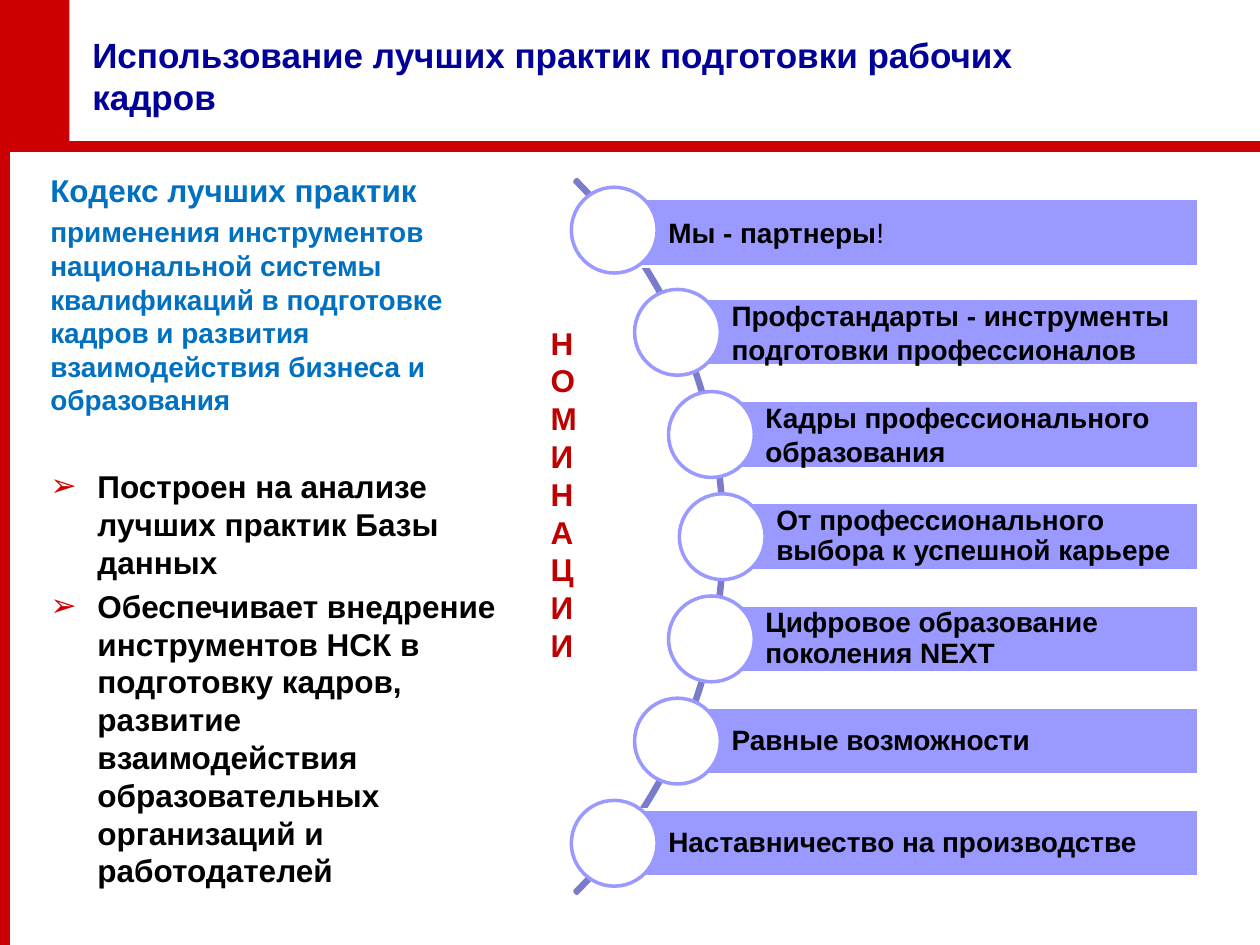
from dataclasses import dataclass
from math import sqrt

from lxml.etree import SubElement
from pptx import Presentation
from pptx.dml.color import RGBColor
from pptx.enum.shapes import MSO_CONNECTOR, MSO_SHAPE as SHAPE
from pptx.enum.text import MSO_ANCHOR as ANCHOR, MSO_AUTO_SIZE, PP_ALIGN as ALIGN
from pptx.oxml.ns import qn
from pptx.util import Cm, Pt


@dataclass(frozen=True)
class Theme:
    font: str = "Arial"
    red: str = "CC0000"
    dark_red: str = "C00000"
    navy: str = "000099"
    blue: str = "0070C0"
    lilac: str = "9999FF"
    arc: str = "7B7BCC"
    white: str = "FFFFFF"
    black: str = "000000"
    title_size: int = 20
    lead_size: int = 18
    text_size: int = 16


THEME = Theme()

NOMINATIONS = [
    ("Мы - партнеры", 1),
    ("Профстандарты - инструменты подготовки профессионалов", 1),
    ("Кадры профессионального образования", 1),
    ("От профессионального выбора к успешной карьере", 0.9),
    ("Цифровое образование поколения NEXT", 0.9),
    ("Равные возможности", 0.9),
    ("Наставничество на производстве", 0.9),
]

ADVANTAGES = [
    "Построен на анализе лучших практик Базы данных",
    "Обеспечивает внедрение инструментов НСК в подготовку кадров, "
    "развитие взаимодействия образовательных организаций и работодателей",
]


def place(box, left, top, width, height):
    box.left, box.top, box.width, box.height = map(Cm, (left, top, width, height))


def set_margins(frame, left, top, right, bottom):
    frame.margin_left, frame.margin_top = Cm(left), Cm(top)
    frame.margin_right, frame.margin_bottom = Cm(right), Cm(bottom)


def add_span(para, text, size=THEME.text_size, color=THEME.black, bold=True):
    span = para.add_run()
    span.text = text
    span.font.name = THEME.font
    span.font.size = Pt(size)
    span.font.bold = bold
    span.font.color.rgb = RGBColor.from_string(color)


def set_bullet(para, symbol=None):
    properties = para._p.get_or_add_pPr()
    indent = Cm(0.95) if symbol else 0
    properties.set("marL", str(indent))
    properties.set("indent", str(-indent))
    if symbol:
        color = SubElement(properties, qn("a:buClr"))
        SubElement(color, qn("a:srgbClr")).set("val", THEME.red)
        SubElement(properties, qn("a:buFont")).set("typeface", THEME.font)
        SubElement(properties, qn("a:buChar")).set("char", symbol)
    else:
        SubElement(properties, qn("a:buNone"))


def add_figure(page, kind, left, top, width, height, fill=None, line=None):
    box = page.shapes.add_shape(kind, *map(Cm, (left, top, width, height)))
    box.shadow.inherit = False
    if fill:
        box.fill.solid()
        box.fill.fore_color.rgb = RGBColor.from_string(fill)
    else:
        box.fill.background()
    if line:
        box.line.color.rgb = RGBColor.from_string(line)
        box.line.width = Pt(2)
    else:
        box.line.fill.background()
    return box


def add_frame(page):
    add_figure(page, SHAPE.RECTANGLE, 0, 0, 0.2, 19.05, THEME.red)
    rule = page.shapes.add_connector(
        MSO_CONNECTOR.STRAIGHT, 0, Cm(2.95), Cm(25.4), Cm(2.95))
    rule.line.color.rgb = RGBColor.from_string(THEME.red)
    rule.line.width = Pt(6)
    SubElement(rule._element.spPr, qn("a:effectLst"))
    add_figure(page, SHAPE.RECTANGLE, 0, 0, 1.4, 2.9, THEME.red)


def fill_title(page):
    title = page.shapes.title
    place(title, 1.68, 0.33, 20.65, 2.39)
    frame = title.text_frame
    frame.auto_size = MSO_AUTO_SIZE.NONE
    frame.vertical_anchor = ANCHOR.MIDDLE
    set_margins(frame, 0.18, 0.1, 0.18, 0.1)
    para = frame.paragraphs[0]
    para.alignment = ALIGN.LEFT
    add_span(para, "Использование лучших практик подготовки рабочих кадров",
             size=THEME.title_size, color=THEME.navy)


def fill_body(page):
    body = page.placeholders[1]
    place(body, 0.76, 3.33, 9.63, 15.44)
    frame = body.text_frame
    frame.auto_size = MSO_AUTO_SIZE.NONE
    items = [
        ("Кодекс лучших практик", THEME.lead_size, THEME.blue, None, 0),
        ("применения инструментов национальной системы квалификаций "
         "в подготовке кадров и развития взаимодействия бизнеса и образования",
         THEME.text_size, THEME.blue, None, 3.2),
    ]
    for text, gap in zip(ADVANTAGES, (29, 3.6)):
        items.append((text, THEME.lead_size, THEME.black, "➢", gap))
    for index, (text, size, color, symbol, gap) in enumerate(items):
        para = frame.add_paragraph() if index else frame.paragraphs[0]
        para.space_before = Pt(gap)
        set_bullet(para, symbol)
        add_span(para, text, size=size, color=color)


def add_nomination(page, index, text, spacing):
    radius, center_x, center_y = 9.86, 4.7, 10.82
    pitch, diameter, bar_height, bar_right = 2.06, 1.73, 1.37, 24.16
    offset = (index - len(NOMINATIONS) // 2) * pitch
    x = center_x + sqrt(radius ** 2 - offset ** 2)
    y = center_y + offset
    bar_y = y if index else y + 0.05
    bar = add_figure(page, SHAPE.RECTANGLE, x, bar_y - bar_height / 2,
                     bar_right - x, bar_height, THEME.lilac, THEME.white)
    frame = bar.text_frame
    frame.word_wrap = True
    frame.vertical_anchor = ANCHOR.MIDDLE
    set_margins(frame, 1.09, 0.1, 0.1, 0.1)
    para = frame.paragraphs[0]
    para.alignment = ALIGN.LEFT
    para.line_spacing = float(spacing)
    add_span(para, text)
    if index == 0:
        add_span(para, "!", bold=False)
    add_figure(page, SHAPE.OVAL, x - diameter / 2, y - diameter / 2,
               diameter, diameter, THEME.white, THEME.lilac)


def add_nominations(page):
    arc = add_figure(page, SHAPE.BLOCK_ARC, -5.74, 0.64, 20.35, 20.35, line=THEME.arc)
    for index, value in enumerate((189, 27, 0.003)):
        arc.adjustments[index] = value
    for index, (text, spacing) in enumerate(NOMINATIONS):
        add_nomination(page, index, text, spacing)


def add_vertical_label(page):
    box = page.shapes.add_textbox(Cm(10.85), Cm(6.4), Cm(1.42), Cm(7.77))
    frame = box.text_frame
    frame.word_wrap = True
    frame._txBody.bodyPr.set("vert", "wordArtVert")
    add_span(frame.paragraphs[0], "НОМИНАЦИИ",
             size=THEME.lead_size, color=THEME.dark_red)


def main():
    deck = Presentation()
    deck.slide_width, deck.slide_height = Cm(25.4), Cm(19.05)
    page = deck.slides.add_slide(deck.slide_layouts[1])
    add_frame(page)
    fill_title(page)
    fill_body(page)
    add_nominations(page)
    add_vertical_label(page)
    deck.save("out.pptx")


if __name__ == "__main__":
    main()
